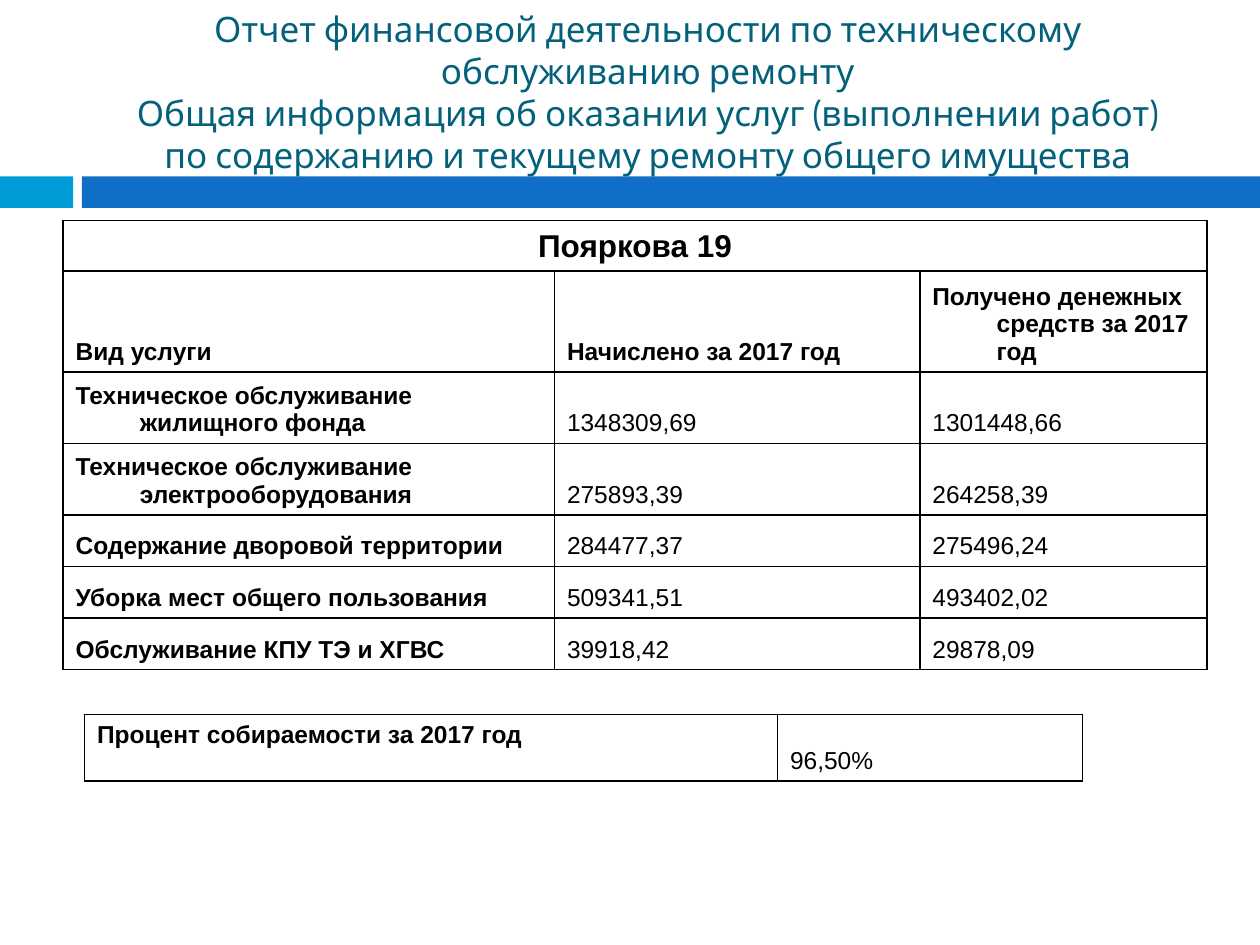
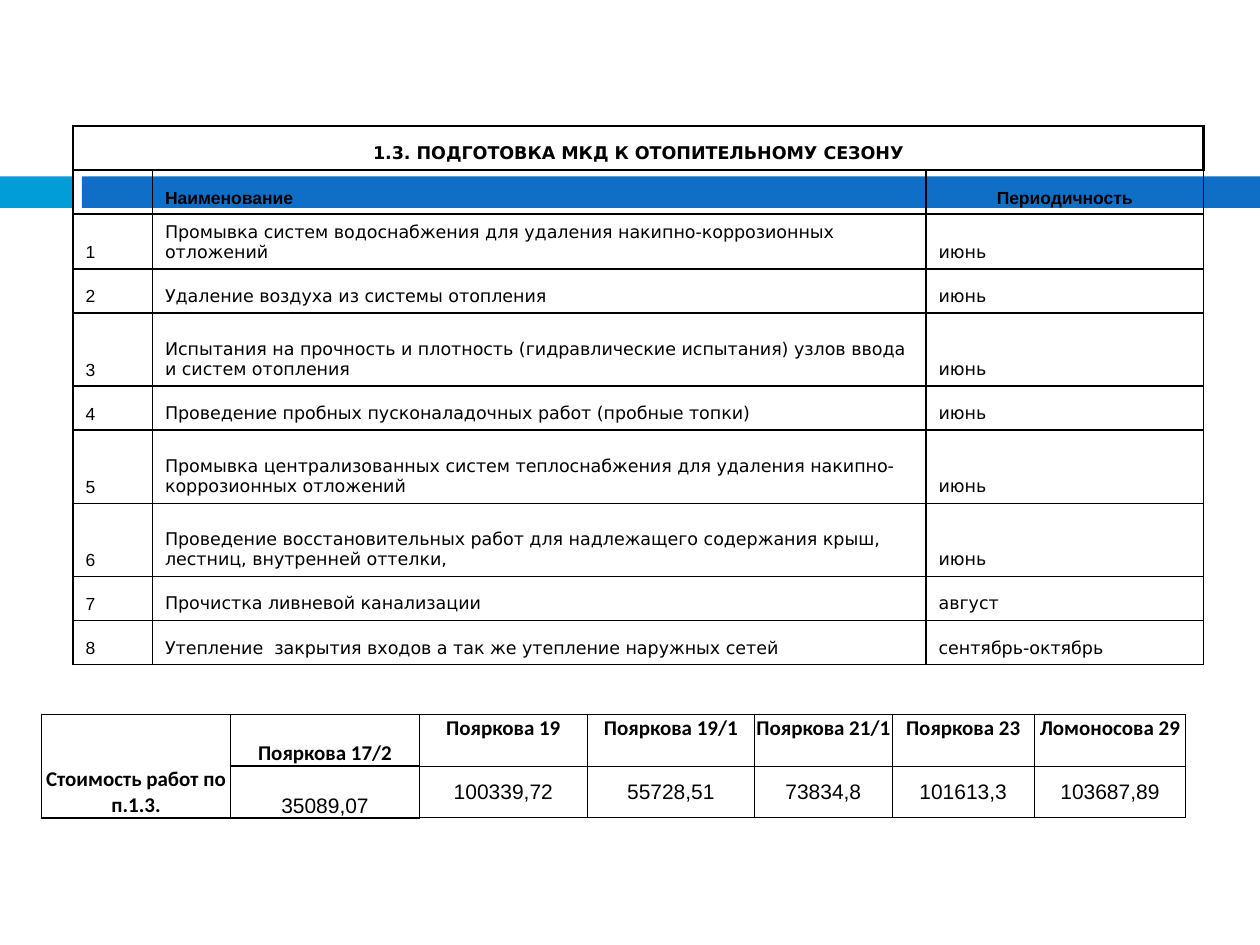
from lxml.etree import SubElement
from pptx import Presentation
from pptx.dml.color import RGBColor
from pptx.enum.shapes import MSO_SHAPE
from pptx.enum.text import MSO_ANCHOR, PP_ALIGN
from pptx.oxml.ns import qn
from pptx.util import Inches, Pt

COLORS = {"accent": "009DD9", "band": "0F6FC6", "title": "04617B", "ink": "000000"}
TITLE = [
    "Отчет финансовой деятельности по техническому обслуживанию ремонту",
    "Общая информация об оказании услуг (выполнении работ)",
    "по содержанию и текущему ремонту общего имущества",
]
SERVICES = [
    ("Вид услуги", "Начислено за 2017 год", "Получено денежных средств за 2017 год"),
    ("Техническое обслуживание жилищного фонда", "1348309,69", "1301448,66"),
    ("Техническое обслуживание электрооборудования", "275893,39", "264258,39"),
    ("Содержание дворовой территории", "284477,37", "275496,24"),
    ("Уборка мест общего пользования", "509341,51", "493402,02"),
    ("Обслуживание КПУ ТЭ и ХГВС", "39918,42", "29878,09"),
]
WORKS = [
    ("Промывка систем водоснабжения для удаления накипно-коррозионных отложений", "июнь"),
    ("Удаление воздуха из системы отопления", "июнь"),
    ("Испытания на прочность и плотность (гидравлические испытания) узлов ввода и систем отопления", "июнь"),
    ("Проведение пробных пусконаладочных работ (пробные топки)", "июнь"),
    ("Промывка централизованных систем теплоснабжения для удаления накипно-коррозионных отложений", "июнь"),
    ("Проведение восстановительных работ для надлежащего содержания крыш, лестниц, внутренней оттелки,", "июнь"),
    ("Прочистка ливневой канализации", "август"),
    ("Утепление  закрытия входов а так же утепление наружных сетей", "сентябрь-октябрь"),
]
COSTS = [
    ("Пояркова 17/2", "35089,07"),
    ("Пояркова 19", "100339,72"),
    ("Пояркова 19/1", "55728,51"),
    ("Пояркова 21/1", "73834,8"),
    ("Пояркова 23", "101613,3"),
    ("Ломоносова 29", "103687,89"),
]


class Deck:
    """Hold the shared style and the current slide."""

    def __init__(self):
        self.prs = Presentation()
        self.prs.slide_width, self.prs.slide_height = Inches(10), Inches(7.5)

    def slide(self):
        self.s = self.prs.slides.add_slide(self.prs.slide_layouts[6])
        self.bar(0, 0.58, "accent")
        self.bar(0.65, 9.35, "band")

    def bar(self, left, width, color):
        sp = self.s.shapes.add_shape(
            MSO_SHAPE.RECTANGLE, Inches(left), Inches(1.4), Inches(width), Inches(0.25))
        sp.shadow.inherit = False
        sp.fill.solid()
        sp.fill.fore_color.rgb = RGBColor.from_string(COLORS[color])
        sp.line.fill.background()

    def font(self, p, name, size, bold=False, color="ink"):
        p.font.name, p.font.size, p.font.bold = name, Pt(size), bold
        p.font.color.rgb = RGBColor.from_string(COLORS[color])

    def title(self, lines):
        sp = self.s.shapes.add_textbox(Inches(0.68), Inches(0.05), Inches(8.92), Inches(1.35))
        tf = sp.text_frame
        tf.word_wrap = True
        tf.vertical_anchor = MSO_ANCHOR.MIDDLE
        tf.margin_top = tf.margin_bottom = 0
        for i, line in enumerate(lines):
            p = tf.add_paragraph() if i else tf.paragraphs[0]
            p.text = line
            p.alignment = PP_ALIGN.CENTER
            self.font(p, "Cabin", 20, color="title")

    def table(self, left, top, widths, heights):
        tbl = self.s.shapes.add_table(
            len(heights), len(widths), Inches(left), Inches(top),
            Inches(sum(widths)), Inches(sum(heights))).table
        tbl.first_row = tbl.horz_banding = False
        for col, width in zip(tbl.columns, widths):
            col.width = Inches(width)
        for row, height in zip(tbl.rows, heights):
            row.height = Inches(height)
        return tbl

    def cell(self, cell, text, name="Arial", size=14, bold=False, center=False,
             anchor=MSO_ANCHOR.BOTTOM, hanging=False, tight=False, line=1, right=None):
        cell.vertical_anchor = anchor
        if tight:
            cell.margin_left = cell.margin_right = cell.margin_bottom = 0
            cell.margin_top = Inches(0.01)
        p = cell.text_frame.paragraphs[0]
        p.text = text
        p.alignment = PP_ALIGN.CENTER if center else PP_ALIGN.LEFT
        self.font(p, name, size, bold)
        if hanging:
            pPr = p._p.get_or_add_pPr()
            pPr.set("marL", str(Inches(0.51)))
            pPr.set("indent", str(-Inches(0.51)))
        self.borders(cell, line, right or line)

    def borders(self, cell, line, right):
        tcPr = cell._tc.get_or_add_tcPr()
        for side, width in zip("LRTB", (line, right, line, line)):
            ln = SubElement(tcPr, qn(f"a:ln{side}"), w=str(Pt(width)))
            fill = SubElement(ln, qn("a:solidFill"))
            SubElement(fill, qn("a:srgbClr"), val=COLORS["ink"])
        cell.fill.background()

    def heading(self, tbl, text, **style):
        for c in range(len(tbl.columns)):
            self.cell(tbl.cell(0, c), "" if c else text, bold=True, center=True, **style)
        tbl.cell(0, 0).merge(tbl.cell(0, len(tbl.columns) - 1))


def finance_slide(deck):
    deck.slide()
    deck.title(TITLE)
    tbl = deck.table(0.5, 1.75, [3.9, 2.9, 2.28], [0.33, 0.39] + [0.41] * 5)
    deck.heading(tbl, "Пояркова 19", size=18, hanging=True)
    for r, row in enumerate(SERVICES, 1):
        for c, text in enumerate(row):
            deck.cell(tbl.cell(r, c), text, bold=r == 1 or c == 0, hanging=True)
    tbl = deck.table(0.67, 5.67, [5.5, 2.42], [0.53])
    deck.cell(tbl.cell(0, 0), "Процент собираемости за 2017 год", bold=True,
              anchor=MSO_ANCHOR.TOP, hanging=True)
    deck.cell(tbl.cell(0, 1), "96,50%", hanging=True)


def heating_slide(deck):
    deck.slide()
    low, high = 0.35, 0.58
    tbl = deck.table(0.58, 1, [0.63, 6.14, 2.2],
                     [low, low, 0.42, low, high, low, high, high, low, low])
    deck.heading(tbl, "1.3. ПОДГОТОВКА МКД К ОТОПИТЕЛЬНОМУ СЕЗОНУ",
                 name="DejaVu Sans", size=10, right=2.25)
    for c, text in enumerate(("", "Наименование", "Периодичность")):
        deck.cell(tbl.cell(1, c), text, size=10, bold=True, center=c == 2)
    for n, work in enumerate(WORKS, 1):
        deck.cell(tbl.cell(n + 1, 0), str(n), size=10)
        for c, text in enumerate(work, 1):
            deck.cell(tbl.cell(n + 1, c), text, name="DejaVu Sans", size=10)

    tbl = deck.table(0.33, 5.67, [1.5, 1.5, 1.33, 1.33, 1.09, 1.13, 1.2], [0.41, 0.41])
    style = {"size": 12, "center": True, "tight": True}
    for r, text in enumerate(("Стоимость работ по п.1.3.", "")):
        deck.cell(tbl.cell(r, 0), text, name="Calibri", bold=True, **style)
    tbl.cell(0, 0).merge(tbl.cell(1, 0))
    for c, (house, cost) in enumerate(COSTS, 1):
        first = c == 1
        line = 1 if first else 0.5
        deck.cell(tbl.cell(0, c), house, name="Calibri", bold=True, line=line,
                  anchor=MSO_ANCHOR.BOTTOM if first else MSO_ANCHOR.TOP, **style)
        deck.cell(tbl.cell(1, c), cost, line=line, right=0.5,
                  anchor=MSO_ANCHOR.BOTTOM if first else MSO_ANCHOR.MIDDLE, **style)


def main():
    deck = Deck()
    finance_slide(deck)
    heating_slide(deck)
    deck.prs.save("out.pptx")


if __name__ == "__main__":
    main()
